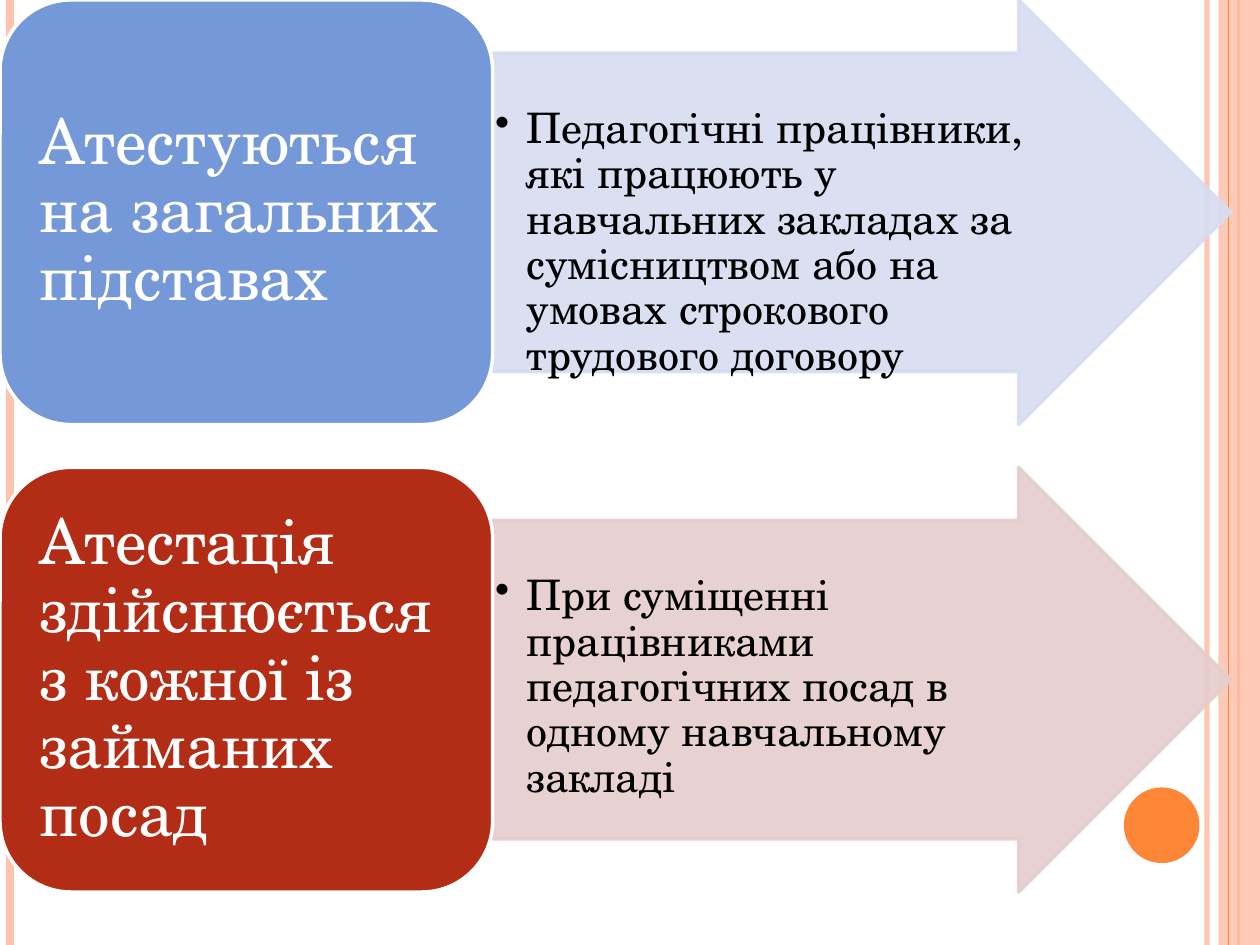
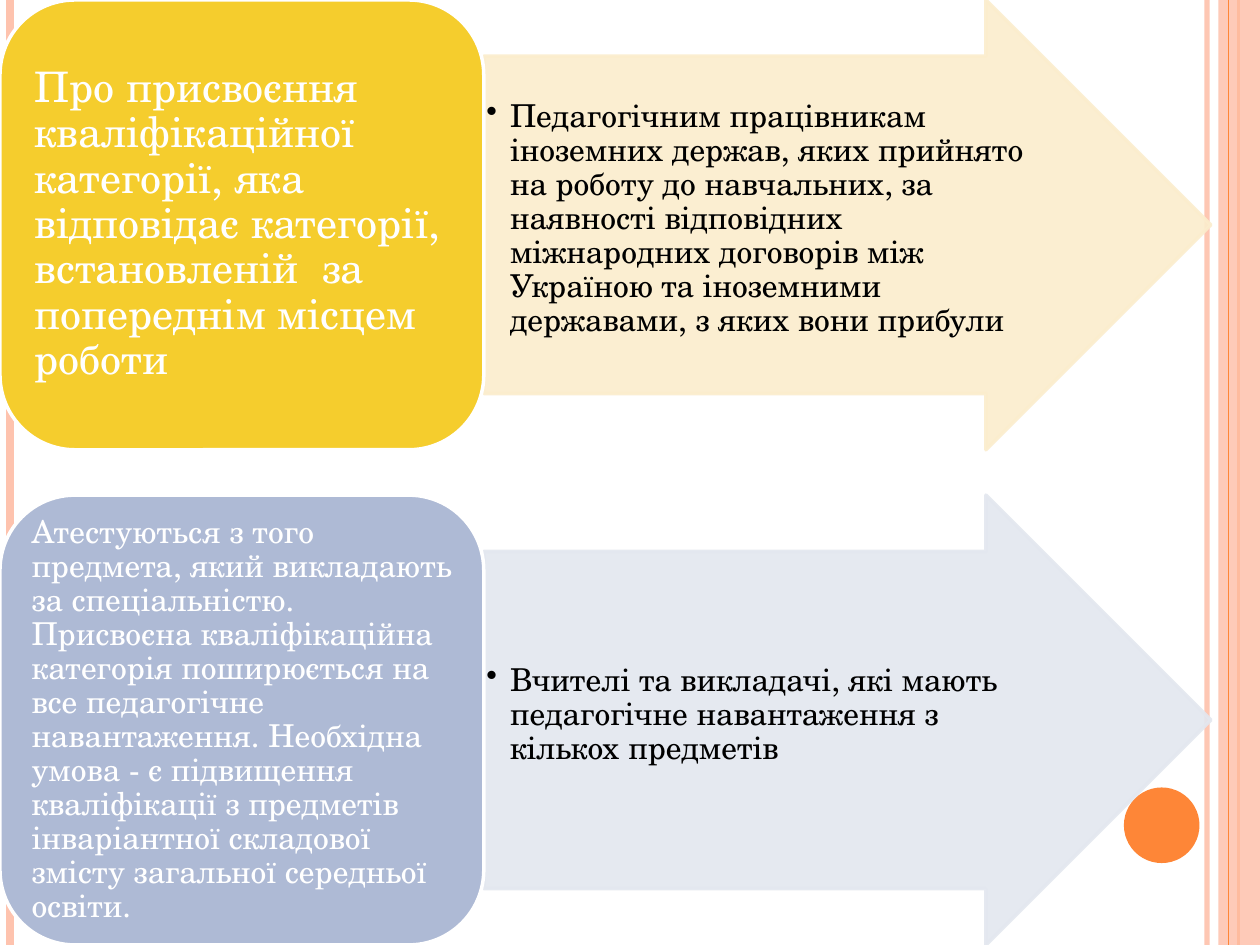
from pptx import Presentation
from pptx.dml.color import RGBColor
from pptx.enum.shapes import MSO_CONNECTOR as Conn, MSO_SHAPE as Shape
from pptx.enum.text import MSO_ANCHOR as Anchor, PP_ALIGN as Align
from pptx.oxml.ns import qn
from pptx.util import Inches, Pt
from lxml.etree import SubElement as Sub

WIDE, HIGH = 10, 7.5
FONT = "TeX Gyre Schola"
WHITE, BLACK, PEACH, ORANGE = "FFFFFF", "000000", "FEC3AE", "FE8637"


def paint(fill, color, alpha=100):
    """Make a fill solid, with its opacity in percent."""
    fill.solid()
    fill.fore_color.rgb = RGBColor.from_string(color)
    if alpha < 100:
        tone = fill._xPr.find(".//" + qn("a:srgbClr"))
        Sub(tone, qn("a:alpha")).set("val", str(alpha * 1000))


class Deck:
    def __init__(self):
        self.prs = Presentation()
        self.prs.slide_width = Inches(WIDE)
        self.prs.slide_height = Inches(HIGH)
        self.slide = None

    def add_slide(self):
        self.slide = self.prs.slides.add_slide(self.prs.slide_layouts[6])
        self.frame()

    def frame(self):
        """Draw the side stripes and the dot that every slide has."""
        self.stripe(9.58, PEACH, 3, 93)
        self.stripe(0.08, PEACH, 4.5)
        self.stripe(9.83, ORANGE, 1.5)
        self.shape(Shape.RECTANGLE, 9.67, 0, 0.33, HIGH, PEACH, 87)
        self.stripe(9.75, ORANGE, 0.75)
        self.shape(Shape.OVAL, 8.92, 6.25, 0.6, 0.6, ORANGE)

    def stripe(self, x, color, width, alpha=100):
        line = self.slide.shapes.add_connector(
            Conn.STRAIGHT, Inches(x), 0, Inches(x), Inches(HIGH))
        line.line.width = Pt(width)
        paint(line.line.fill, color, alpha)
        Sub(line._element.spPr, qn("a:effectLst"))

    def shape(self, kind, x, y, w, h, color, alpha=100, edge=None):
        item = self.slide.shapes.add_shape(
            kind, Inches(x), Inches(y), Inches(w), Inches(h))
        item.shadow.inherit = False
        paint(item.fill, color, alpha)
        if edge:
            item.line.width = Pt(2)
            paint(item.line.fill, edge, alpha)
        else:
            item.line.fill.background()
        return item

    def text(self, x, y, w, h, lines, size, color, anchor, pad_x, pad_y):
        box = self.slide.shapes.add_textbox(
            Inches(x), Inches(y), Inches(w), Inches(h))
        frame = box.text_frame
        frame.word_wrap = True
        frame.vertical_anchor = anchor
        frame.margin_left = frame.margin_right = Inches(pad_x)
        frame.margin_top = frame.margin_bottom = Inches(pad_y)
        frame.text = "\n".join(lines)
        for para in frame.paragraphs:
            para.alignment = Align.LEFT
            para.line_spacing = 0.9
            para.font.name = FONT
            para.font.size = Pt(size)
            para.font.color.rgb = RGBColor.from_string(color)
        return frame

    def label(self, y, w, h, lines, size, color):
        self.shape(Shape.ROUNDED_RECTANGLE, 0, y, w, h, color, edge=WHITE)
        gap = h * 0.049
        self.text(gap, y + gap, w - 2 * gap, h - 2 * gap, lines, size,
                  WHITE, Anchor.MIDDLE, size / 240, size / 480)

    def arrow(self, x, y, w, h, line, size, color, drop):
        """Draw an arrow whose bullet starts at drop below the shaft's top."""
        item = self.shape(Shape.RIGHT_ARROW, x, y, w, h, color, 90, color)
        item.adjustments[0] = 0.75
        item.adjustments[1] = 0.5
        frame = self.text(x, y + h / 8, w - h * 0.375, h * 0.75, [line], size,
                          BLACK, Anchor.TOP, 0.02, 0.02)
        frame.margin_top = Inches(drop)
        props = frame.paragraphs[0]._p.get_or_add_pPr()
        props.set("marL", str(Inches(size / 96)))
        props.set("indent", str(-Inches(size / 96)))
        mark = Sub(props, qn("a:buChar"))
        mark.set("char", "•")
        props.insert(list(props).index(props.find(qn("a:defRPr"))), mark)

    def rows(self, wide, reach, high, step, size, items):
        """Add a slide with a stack of labels, each with an arrow."""
        self.add_slide()
        for i, (head, big, color, body, tint, drop) in enumerate(items):
            y = i * step
            self.arrow(wide, y, reach, high, body, size, tint, drop)
            self.label(y, wide, high, head, big, color)


def main():
    deck = Deck()
    deck.rows(3.91, 5.86, 3.37, 3.71, 24, [
        (["Атестуються на загальних підставах"], 36, "7598D9",
         "Педагогічні працівники, які працюють у навчальних закладах за "
         "сумісництвом або на умовах строкового трудового договору",
         "D6DDF1", 0.43),
        (["Атестація здійснюється з кожної із займаних посад"], 36, "B32C16",
         "При суміщенні працівниками педагогічних посад в одному "
         "навчальному закладі", "E5CDCC", 0.43),
    ])
    deck.rows(3.84, 5.77, 3.57, 3.93, 18, [
        (["Про присвоєння кваліфікаційної категорії, яка відповідає "
          "категорії, встановленій  за попереднім місцем роботи"],
         24, "F5CD2D",
         "Педагогічним працівникам іноземних держав, яких прийнято на роботу "
         "до навчальних, за наявності відповідних міжнародних договорів між "
         "Україною та іноземними державами, з яких вони прибули",
         "FBEDCD", 0.35),
        (["Атестуються з того предмета, який викладають за спеціальністю.",
          "Присвоєна кваліфікаційна категорія поширюється на все педагогічне "
          "навантаження. Необхідна умова - є підвищення кваліфікації з "
          "предметів інваріантної складової змісту загальної середньої "
          "освіти."], 18, "AEBAD5",
         "Вчителі та викладачі, які мають педагогічне навантаження з кількох "
         "предметів", "E3E7EF", 1),
    ])
    deck.prs.save("out.pptx")


if __name__ == "__main__":
    main()
